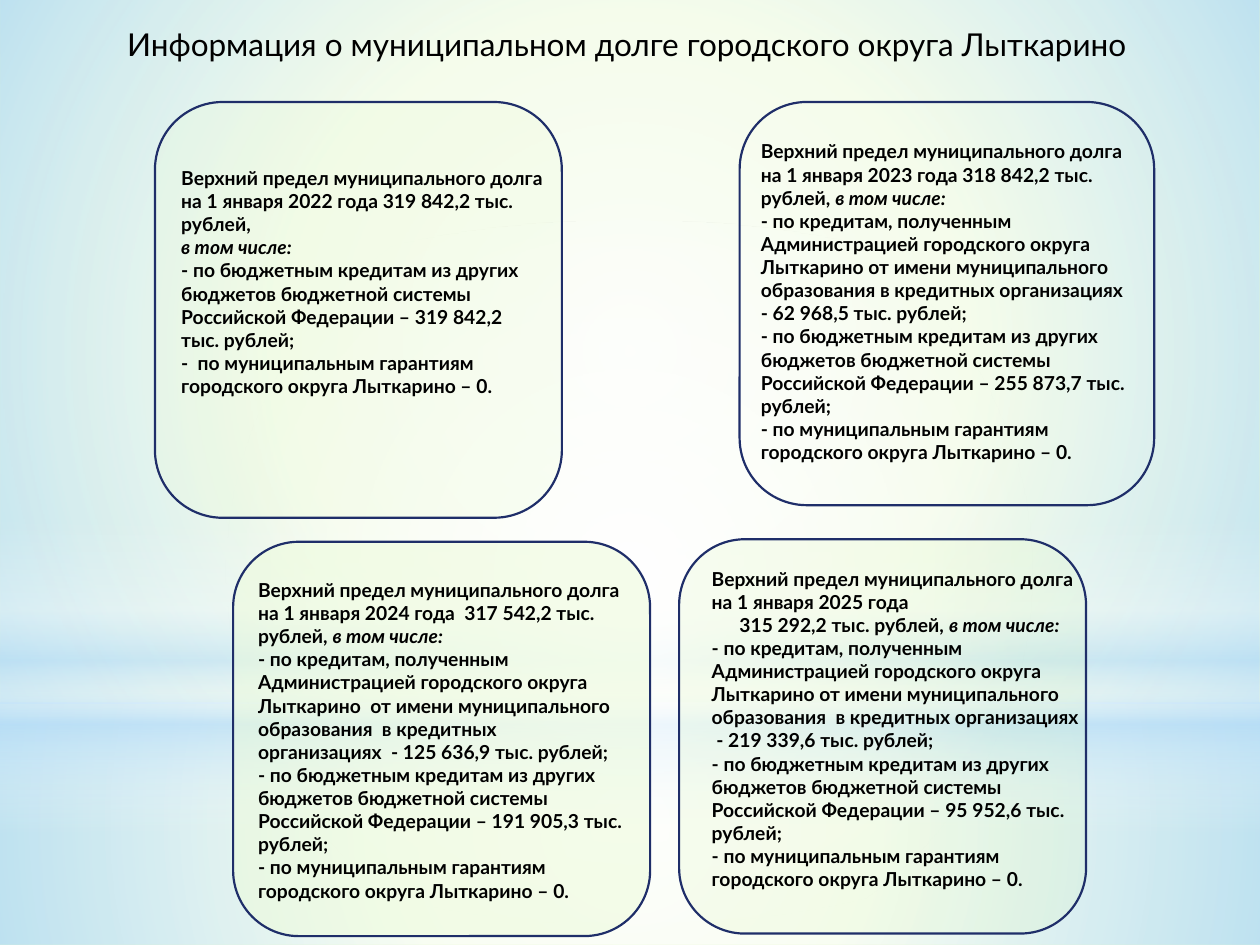
from dataclasses import dataclass
from typing import NamedTuple, Optional

import pptx
import pptx.dml.color
import pptx.enum.shapes
import pptx.enum.text
import pptx.oxml
import pptx.oxml.ns
import pptx.util
from lxml import etree

Inches = pptx.util.Inches
Shapes = pptx.enum.shapes.MSO_SHAPE
RGB = pptx.dml.color.RGBColor.from_string


@dataclass(frozen=True)
class Theme:
    font: str = "Lato"
    title_size: float = 18
    body_size: float = 11
    text: str = "000000"
    outline: str = "1F2E69"
    outline_width: float = 1.25
    lime: str = "DCF7BA"
    pale_lime: str = "EDFBDC"
    white: str = "FFFFFF"
    sky: str = "B4DCFA"


THEME = Theme()


class Rect(NamedTuple):
    left: float
    top: float
    width: float
    height: float

    def lengths(self) -> list:
        return [Inches(value) for value in self]


class Stop(NamedTuple):
    position: int
    color: str
    opacity: int = 100


class Glow(NamedTuple):
    rect: Rect
    stops: list[Stop]
    shape: int = Shapes.RECTANGLE
    angle: Optional[int] = None  # None means a gradient from the centre


class Line(NamedTuple):
    plain: str = ""
    italic: str = ""
    indent: float = 0


class Card(NamedTuple):
    frame: Rect
    text_rect: Rect
    lines: list[Line]
    fill: Optional[str] = None
    opacity: int = 100


INCLUDING = "в том числе:"
BUDGET = "- по бюджетным кредитам из других бюджетов бюджетной системы Российской Федерации – "
GUARANTEES = Line("- по муниципальным гарантиям городского округа Лыткарино – 0.")


def limit(year: int) -> str:
    return f"Верхний предел муниципального долга на 1 января {year} года"


def bank_loans(tail: str, gap: str = " ") -> Line:
    return Line("- по кредитам, полученным Администрацией городского округа "
                f"Лыткарино{gap}от имени муниципального образования{tail} тыс. рублей;")


def budget_loans(amount: str) -> Line:
    return Line(f"{BUDGET}{amount} тыс. рублей;")


GLOWS = [
    Glow(Rect(0, 5.58, 10, 1.92),
         [Stop(0, THEME.white, 91), Stop(37, THEME.white, 76), Stop(100, THEME.sky, 79)]),
    Glow(Rect(0, 0, 10, 5.58),
         [Stop(0, THEME.white, 89), Stop(48, THEME.white, 62), Stop(100, THEME.sky, 79)]),
    Glow(Rect(0, 4.12, 10, 2.5),
         [Stop(0, THEME.white, 0), Stop(29, THEME.white, 30), Stop(45, THEME.sky, 40),
          Stop(55, THEME.white, 26), Stop(65, THEME.sky, 60), Stop(100, THEME.white, 0)],
         angle=90),
    Glow(Rect(0, 1.75, 10, 5.58),
         [Stop(0, THEME.white), Stop(56, THEME.white, 0)], Shapes.OVAL),
]

CARDS = [
    Card(Rect(1.23, 0.81, 3.23, 3.3), Rect(1.34, 1.27, 3.07, 1.95),
         [Line(f"{limit(2022)} 319 842,2 тыс. рублей,"),
          Line(italic=INCLUDING),
          budget_loans("319 842,2"),
          Line(GUARANTEES.plain.replace("- ", "-  ", 1))],
         THEME.pale_lime, 28),
    Card(Rect(5.87, 0.81, 3.29, 3.2), Rect(5.94, 1.06, 3.15, 2.69),
         [Line(f"{limit(2023)} 318 842,2 тыс. рублей, ", INCLUDING),
          bank_loans(" в кредитных организациях - 62 968,5"),
          budget_loans("255 873,7"),
          GUARANTEES]),
    Card(Rect(1.85, 4.3, 3.31, 3.13), Rect(1.95, 4.54, 3.11, 2.88),
         [Line(f"{limit(2024)}  317 542,2 тыс. рублей, ", INCLUDING),
          bank_loans("  в кредитных организациях  - 125 636,9", "  "),
          budget_loans("191 905,3"),
          GUARANTEES],
         THEME.pale_lime, 56),
    Card(Rect(5.39, 4.28, 3.23, 3.13), Rect(5.55, 4.45, 3.15, 2.88),
         [Line(limit(2025)),
          Line("315 292,2 тыс. рублей, ", INCLUDING, indent=0.22),
          bank_loans("  в кредитных организациях  - 219 339,6"),
          budget_loans("95 952,6"),
          GUARANTEES],
         THEME.lime, 19),
]


def set_solid(fill, color: str, opacity: int, owner) -> None:
    fill.solid()
    fill.fore_color.rgb = RGB(color)
    color_node = next(owner.iter(pptx.oxml.ns.qn("a:srgbClr")))
    etree.SubElement(color_node, pptx.oxml.ns.qn("a:alpha"), val=str(opacity * 1000))


def draw_glow(page, glow: Glow) -> None:
    shape = page.shapes.add_shape(glow.shape, *glow.rect.lengths())
    shape.shadow.inherit = False
    shape.line.fill.background()
    stops = "".join(
        f'<a:gs pos="{stop.position * 1000}"><a:srgbClr val="{stop.color}">'
        f'<a:alpha val="{stop.opacity * 1000}"/></a:srgbClr></a:gs>' for stop in glow.stops)
    if glow.angle is None:
        direction = ('<a:path path="circle"><a:fillToRect l="50000" t="50000" '
                     'r="50000" b="50000"/></a:path>')
    else:
        direction = f'<a:lin ang="{glow.angle * 60000}" scaled="0"/>'
    gradient = pptx.oxml.parse_xml(
        f'<a:gradFill {pptx.oxml.ns.nsdecls("a")} rotWithShape="1">'
        f'<a:gsLst>{stops}</a:gsLst>{direction}</a:gradFill>')
    shape.element.spPr.find(pptx.oxml.ns.qn("a:prstGeom")).addnext(gradient)


def draw_text(page, rect: Rect, lines: list[Line], size: float, bold: bool) -> None:
    box = page.shapes.add_textbox(*rect.lengths())
    frame = box.text_frame
    frame.word_wrap = True
    frame.auto_size = pptx.enum.text.MSO_AUTO_SIZE.SHAPE_TO_FIT_TEXT
    frame.text = "\n".join(line.plain for line in lines)
    for para, line in zip(frame.paragraphs, lines):
        if line.indent:
            para._p.get_or_add_pPr().set("marL", str(Inches(line.indent)))
        if line.italic:
            span = para.add_run()
            span.text = line.italic
            span.font.italic = True
        for span in para.runs:
            span.font.name = THEME.font
            span.font.size = pptx.util.Pt(size)
            span.font.bold = bold
            span.font.color.rgb = RGB(THEME.text)


def draw_card(page, card: Card) -> None:
    shape = page.shapes.add_shape(Shapes.ROUNDED_RECTANGLE, *card.frame.lengths())
    shape.shadow.inherit = False
    if card.fill:
        set_solid(shape.fill, card.fill, card.opacity, shape.element.spPr)
    else:
        shape.fill.background()
    shape.line.color.rgb = RGB(THEME.outline)
    shape.line.width = pptx.util.Pt(THEME.outline_width)
    draw_text(page, card.text_rect, card.lines, THEME.body_size, True)


def main() -> None:
    deck = pptx.Presentation()
    deck.slide_width, deck.slide_height = Inches(10), Inches(7.5)
    page = deck.slides.add_slide(deck.slide_layouts[6])

    # Backdrop
    set_solid(page.background.fill, THEME.lime, 76, page.element.cSld)
    for glow in GLOWS:
        draw_glow(page, glow)

    # Debt limit of each year
    for card in CARDS:
        draw_card(page, card)

    # Title
    title = Line("Информация о муниципальном долге городского округа Лыткарино")
    draw_text(page, Rect(0.91, 0.15, 8.58, 0.4), [title], THEME.title_size, False)

    deck.save("out.pptx")


if __name__ == "__main__":
    main()
